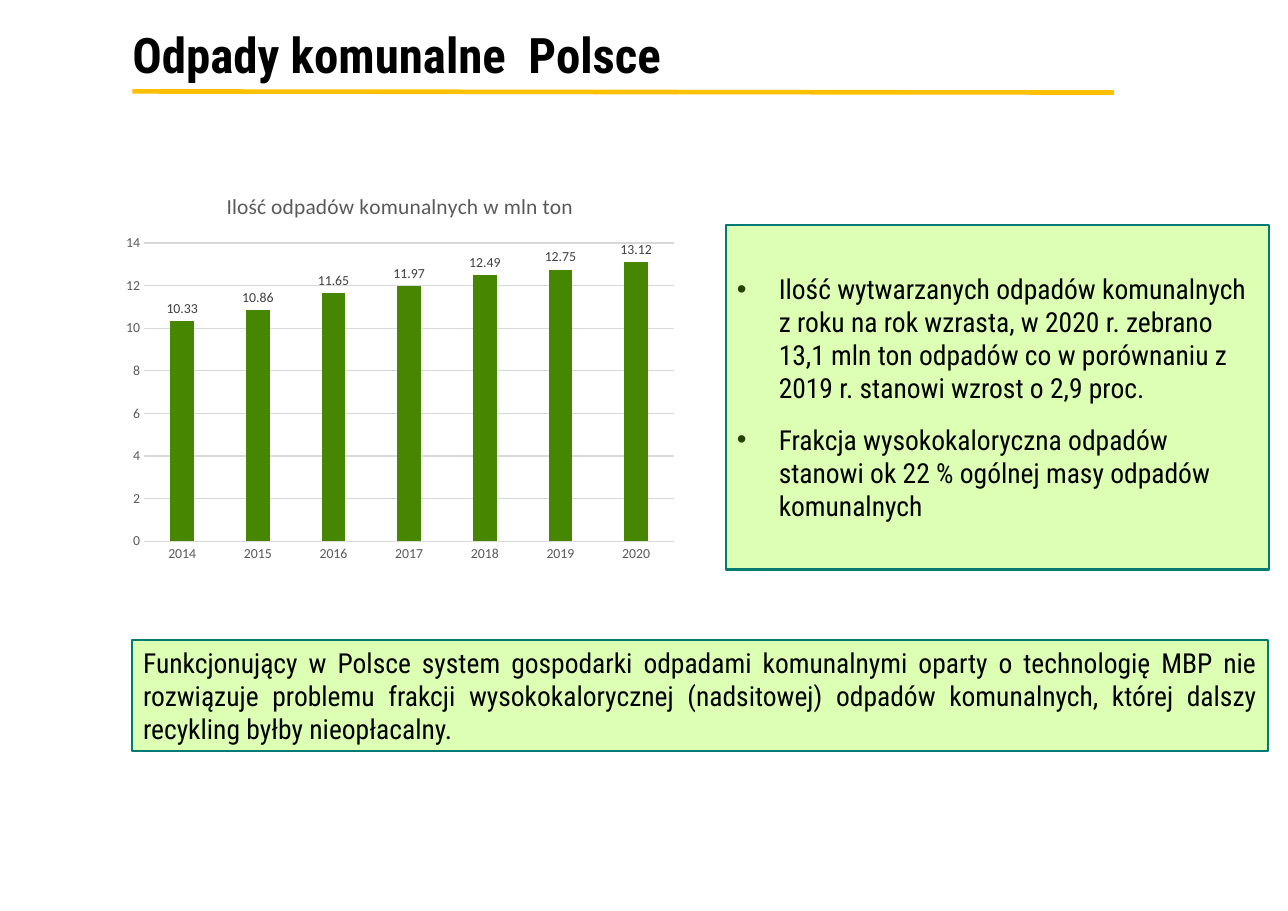
"""Build a slide on municipal waste in Poland: a column chart and two text boxes."""
from lxml import etree
from pptx import Presentation
from pptx.chart import data
from pptx.dml import color
from pptx.enum import chart as kinds, shapes, text
from pptx.oxml import ns
from pptx import util as u

theme = {
    "ink": "000000", "grey": "595959", "label": "404040", "grid": "D9D9D9",
    "bar": "478600", "rule": "FFC000", "box": "DCFFB4", "edge": "007B73",
    "dot": "244300", "face": "Roboto Condensed", "plain": "Calibri",
    "head": 32, "body": 18, "caption": 14, "tick": 9,
}
waste = {"2014": 10.33, "2015": 10.86, "2016": 11.65, "2017": 11.97,
         "2018": 12.49, "2019": 12.75, "2020": 13.12}
facts = [
    "Ilość wytwarzanych odpadów komunalnych z roku na rok wzrasta, w 2020 r. zebrano "
    "13,1 mln ton odpadów co w porównaniu z 2019 r. stanowi wzrost o 2,9 proc.",
    "Frakcja wysokokaloryczna odpadów stanowi ok 22 % ogólnej masy odpadów komunalnych",
]
claim = [
    "Funkcjonujący w Polsce system gospodarki odpadami komunalnymi oparty o technologię MBP "
    "nie rozwiązuje problemu frakcji wysokokalorycznej (nadsitowej) odpadów komunalnych, "
    "której dalszy recykling byłby nieopłacalny.",
]

deck = Presentation()
deck.slide_width, deck.slide_height = u.Inches(11.69), u.Inches(8.27)
slide = deck.slides.add_slide(deck.slide_layouts[5])
left = 10.27


def grid(x, y, w, h):
    """Turn percentages of the slide into lengths."""
    wide, high = deck.slide_width / 100, deck.slide_height / 100
    return int(x * wide), int(y * high), int(w * wide), int(h * high)


def style(font, size, ink, face, bold=False):
    """Set the look of a font from theme keys."""
    looks = {"size": u.Pt(theme[size]), "name": theme[face], "bold": bold}
    for key, value in looks.items():
        setattr(font, key, value)
    font.color.rgb = color.RGBColor.from_string(theme[ink])


title = slide.shapes.title
spot = grid(left, 5.2, 81.69, 2.3)
for key, value in zip(("left", "top", "width", "height"), spot):
    setattr(title, key, value)
frame = title.text_frame
frame.text = "Odpady komunalne  Polsce"
looks = {"margin_left": 0, "margin_right": 0, "margin_top": 0, "margin_bottom": 0,
         "vertical_anchor": text.MSO_ANCHOR.MIDDLE, "auto_size": text.MSO_AUTO_SIZE.NONE,
         "word_wrap": True}
for key, value in looks.items():
    setattr(frame, key, value)
para = frame.paragraphs[0]
para.alignment, para.line_spacing = text.PP_ALIGN.LEFT, 0.9
style(para.runs[0].font, "head", "ink", "face", True)

rule = slide.shapes.add_connector(
    shapes.MSO_CONNECTOR.STRAIGHT, *grid(left, 10.04, 86.48, 10.16))
rule.line.color.rgb = color.RGBColor.from_string(theme["rule"])
rule.line.width = u.Pt(3)
etree.SubElement(rule._element.spPr, ns.qn("a:effectLst"))

boxes = [
    (grid(56.37, 24.67, 42.17, 37.85), facts, True, text.PP_ALIGN.LEFT),
    (grid(left, 70.25, 88.2, 12.21), claim, False, text.PP_ALIGN.JUSTIFY),
]
for spot, lines, dots, align in boxes:
    box = slide.shapes.add_shape(shapes.MSO_SHAPE.RECTANGLE, *spot)
    box.shadow.inherit = False
    box.fill.solid()
    box.fill.fore_color.rgb = color.RGBColor.from_string(theme["box"])
    box.line.color.rgb = color.RGBColor.from_string(theme["edge"])
    box.line.width = u.Pt(1.5)
    frame = box.text_frame
    frame.word_wrap, frame.vertical_anchor = True, text.MSO_ANCHOR.MIDDLE
    for i, line in enumerate(lines):
        para = frame.paragraphs[0] if i == 0 else frame.add_paragraph()
        if dots:
            props = para._p.get_or_add_pPr()
            props.set("marL", str(u.Inches(0.38)))
            props.set("indent", str(-u.Inches(0.38)))
            tint = etree.SubElement(props, ns.qn("a:buClr"))
            etree.SubElement(tint, ns.qn("a:srgbClr"), val=theme["dot"])
            etree.SubElement(props, ns.qn("a:buFont"), typeface="Arial")
            etree.SubElement(props, ns.qn("a:buChar"), char="•")
        looks = {"alignment": align, "space_before": u.Pt(6 if i else 0),
                 "space_after": u.Pt(6)}
        for key, value in looks.items():
            setattr(para, key, value)
        run = para.add_run()
        run.text = line
        style(run.font, "body", "ink", "face")

sheet = data.CategoryChartData()
sheet.categories = list(waste)
sheet.add_series("Ilość odpadów", list(waste.values()))
chart = slide.shapes.add_chart(
    kinds.XL_CHART_TYPE.COLUMN_CLUSTERED, *grid(8.9, 19.11, 44.31, 43.41), sheet).chart
style(chart.font, "tick", "grey", "plain")
chart.has_legend = False
chart.has_title = True
chart.chart_title.include_in_layout = False
frame = chart.chart_title.text_frame
frame.text = "Ilość odpadów komunalnych w mln ton"
style(frame.paragraphs[0].runs[0].font, "caption", "grey", "plain")

years, tons = chart.category_axis, chart.value_axis
for axis in (years, tons):
    axis.major_tick_mark = axis.minor_tick_mark = kinds.XL_TICK_MARK.NONE
    style(axis.tick_labels.font, "tick", "grey", "plain")
looks = {"minimum_scale": 0, "maximum_scale": 14, "major_unit": 2,
         "has_major_gridlines": True}
for key, value in looks.items():
    setattr(tons, key, value)
tons.format.line.fill.background()
for part in (years, tons.major_gridlines):
    part.format.line.color.rgb = color.RGBColor.from_string(theme["grid"])
    part.format.line.width = u.Pt(0.75)

plot = chart.plots[0]
looks = {"gap_width": 219, "overlap": -27, "vary_by_categories": False,
         "has_data_labels": True}
for key, value in looks.items():
    setattr(plot, key, value)
fill = plot.series[0].format.fill
fill.solid()
fill.fore_color.rgb = color.RGBColor.from_string(theme["bar"])
tags = plot.data_labels
tags.show_value, tags.position = True, kinds.XL_LABEL_POSITION.OUTSIDE_END
style(tags.font, "tick", "label", "plain")

deck.save("out.pptx")
